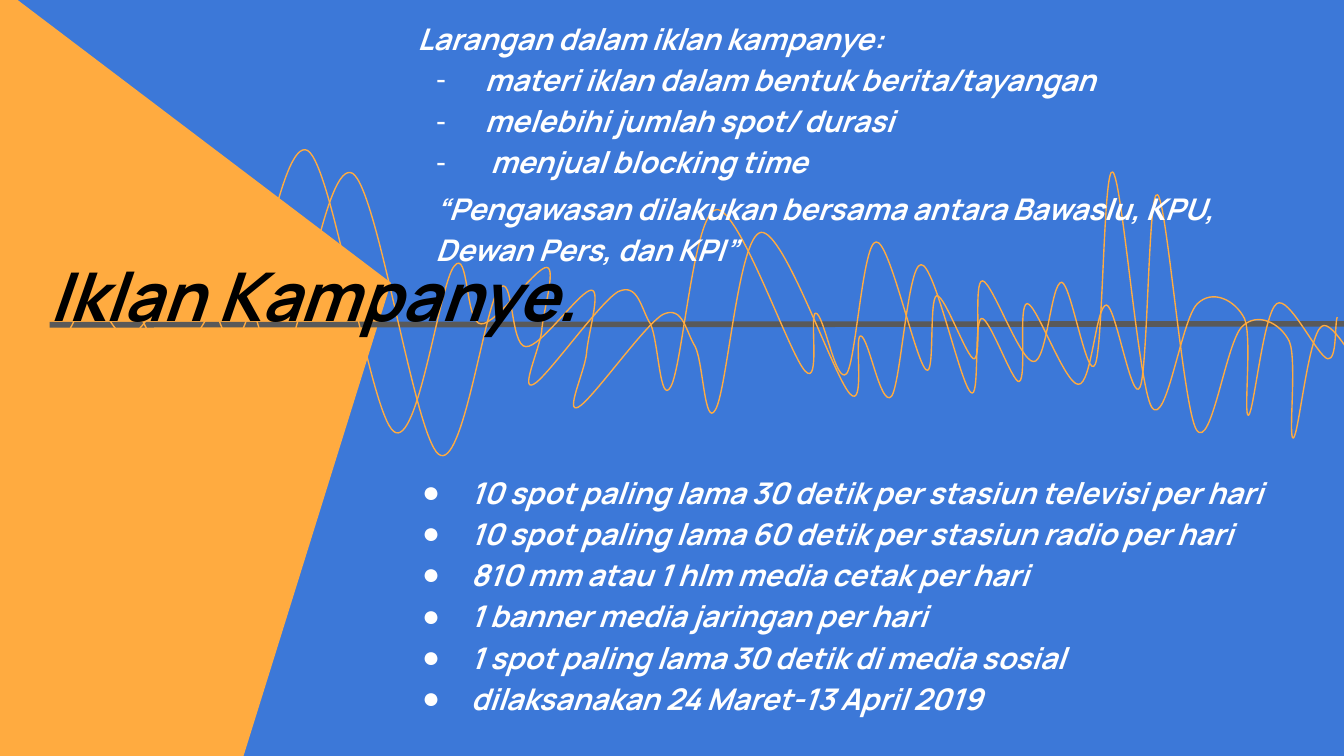
"""Build the campaign advertising rules slide."""
from dataclasses import dataclass

from lxml import etree
from pptx import Presentation
from pptx.dml.color import RGBColor
from pptx.enum.shapes import MSO_CONNECTOR, MSO_SHAPE
from pptx.enum.text import MSO_ANCHOR, MSO_AUTO_SIZE, PP_ALIGN
from pptx.oxml.ns import qn
from pptx.util import Pt

PENTAGON = MSO_SHAPE.REGULAR_PENTAGON
STRAIGHT = MSO_CONNECTOR.STRAIGHT
TOP = MSO_ANCHOR.TOP
NO_FIT = MSO_AUTO_SIZE.NONE
LEFT = PP_ALIGN.LEFT


@dataclass(frozen=True)
class Theme:
    """Colours, fonts and sizes of the slide."""
    blue: str = "3C78D8"
    orange: str = "FFAB40"
    grey: str = "595959"
    black: str = "000000"
    white: str = "FFFFFF"
    font: str = "Manrope"
    bullet_font: str = "Arial"
    title: int = 36
    body: int = 16
    spacing: float = 1.15


THEME = Theme()
UNIT = Pt(0.72)
WAVE_OFFSETS = [(0, 0), (24, 12.2)]
WAVE_START = (-122, 262)
WAVE_CURVES = [
    (-113, 245, -80, 161, -70, 159), (-60, 156, -68, 239, -63, 247),
    (-58, 255, -53, 208, -42, 208), (-31, 207, -11, 249, 4, 245),
    (19, 242, 33, 184, 48, 185), (63, 186, 78, 248, 94, 250),
    (110, 251, 129, 193, 143, 194), (157, 194, 162, 265, 177, 251),
    (191, 238, 209, 101, 229, 112), (248, 124, 275, 307, 293, 321),
    (311, 335, 327, 211, 338, 198), (349, 184, 346, 241, 358, 241),
    (369, 242, 399, 198, 407, 199), (414, 200, 404, 232, 403, 247),
    (401, 261, 387, 291, 397, 286), (407, 281, 446, 225, 460, 217),
    (475, 210, 477, 230, 484, 241), (490, 253, 491, 302, 499, 288),
    (508, 273, 516, 158, 533, 156), (550, 154, 587, 263, 599, 276),
    (611, 289, 602, 233, 607, 233), (613, 233, 622, 287, 630, 278),
    (637, 269, 642, 180, 652, 180), (662, 179, 681, 268, 689, 275),
    (696, 282, 691, 222, 697, 220), (703, 219, 720, 268, 725, 267),
    (731, 265, 724, 209, 731, 209), (738, 209, 759, 269, 769, 269),
    (779, 270, 782, 210, 790, 210), (797, 211, 809, 285, 815, 271),
    (821, 257, 821, 122, 828, 128), (835, 133, 847, 287, 857, 303),
    (868, 319, 879, 237, 891, 226), (902, 215, 919, 223, 926, 237),
    (932, 251, 925, 310, 929, 309), (933, 307, 940, 233, 950, 226),
    (959, 219, 980, 265, 988, 267), (995, 268, 993, 241, 995, 236),
]
BANS = [
    "materi iklan dalam bentuk berita/tayangan",
    "melebihi jumlah spot/ durasi",
    " menjual blocking time",
]
LIMITS = [
    "10 spot paling lama 30 detik per stasiun televisi per hari",
    "10 spot paling lama 60 detik per stasiun radio per hari",
    "810 mm atau 1 hlm media cetak per hari",
    "1 banner media jaringan per hari",
    "1 spot paling lama 30 detik di media sosial",
    "dilaksanakan 24 Maret-13 April 2019",
]
QUOTE = "“Pengawasan dilakukan bersama antara Bawaslu, KPU, Dewan Pers, dan KPI”"


def rgb(value):
    """Return a colour from its hex value."""
    return RGBColor.from_string(value)


def apply(target, values):
    """Set attributes from a dict of format values."""
    for name, value in values.items():
        setattr(target, name, value)


def place(sp, box):
    """Move and size a shape to a box in points."""
    apply(sp, dict(zip(("left", "top", "width", "height"), map(Pt, box))))


def set_line(sp, color, width):
    """Give a shape or connector a solid line."""
    sp.line.color.rgb = rgb(color)
    sp.line.width = Pt(width)


def add_pentagon(s, box):
    """Add the plain orange pentagon."""
    sp = s.shapes.add_shape(PENTAGON, *map(Pt, box))
    sp.shadow.inherit = False
    sp.fill.solid()
    sp.fill.fore_color.rgb = rgb(THEME.orange)
    sp.line.fill.background()


def add_rule(s, start, end):
    """Add the thick grey rule."""
    line = s.shapes.add_connector(STRAIGHT, *map(Pt, start + end))
    set_line(line, THEME.grey, 3)
    etree.SubElement(line._element.spPr, qn("a:effectLst"))


def bend(sp, knots):
    """Turn the straight segments of a wave into cubic curves."""
    left, top = map(min, zip(*knots))
    segments = list(sp._element.iter(qn("a:lnTo")))
    for segment, curve in zip(segments, WAVE_CURVES):
        cubic = etree.Element(qn("a:cubicBezTo"))
        for x, y in zip(curve[::2], curve[1::2]):
            etree.SubElement(cubic, qn("a:pt"), x=str(x - left), y=str(y - top))
        segment.getparent().replace(segment, cubic)


def add_waves(s):
    """Add the sound wave once at each offset."""
    knots = [WAVE_START] + [curve[4:] for curve in WAVE_CURVES]
    builder = s.shapes.build_freeform(*WAVE_START, scale=UNIT)
    builder.add_line_segments(knots[1:], close=False)
    for offset in WAVE_OFFSETS:
        sp = builder.convert_to_shape(*map(Pt, offset))
        bend(sp, knots)
        sp.shadow.inherit = False
        sp.fill.background()
        set_line(sp, THEME.orange, 0.75)


def format_frame(tf):
    """Set wrapping, anchor and margins of a text frame."""
    margins = ("margin_left", "margin_right", "margin_top", "margin_bottom")
    apply(tf, {"word_wrap": True, "auto_size": NO_FIT, "vertical_anchor": TOP})
    apply(tf, dict.fromkeys(margins, Pt(7.2)))


def add_run(p, text, size, color):
    """Add a bold italic run to a paragraph."""
    r = p.add_run()
    r.text = text
    apply(r.font, {"name": THEME.font, "size": Pt(size), "bold": True, "italic": True})
    r.font.color.rgb = rgb(color)


def add_bullet(p, mark):
    """Give a paragraph a hanging white bullet."""
    pPr = p._p.get_or_add_pPr()
    pPr.set("marL", str(Pt(36)))
    pPr.set("indent", str(Pt(-26)))
    color = etree.SubElement(pPr, qn("a:buClr"))
    etree.SubElement(color, qn("a:srgbClr"), val=THEME.white)
    etree.SubElement(pPr, qn("a:buFont"), typeface=THEME.bullet_font)
    etree.SubElement(pPr, qn("a:buChar"), char=mark)


def add_text(s, box, lines):
    """Add a text box from pairs of bullet mark and text."""
    tf = s.shapes.add_textbox(*map(Pt, box)).text_frame
    format_frame(tf)
    for i, (mark, text) in enumerate(lines):
        p = tf.add_paragraph() if i else tf.paragraphs[0]
        apply(p, {"line_spacing": THEME.spacing, "alignment": LEFT})
        if mark:
            add_bullet(p, mark)
        add_run(p, text, THEME.body, THEME.white)


def add_title(s, box, text):
    """Format the title placeholder and bring it to the front."""
    title = s.shapes.title
    place(title, box)
    format_frame(title.text_frame)
    p = title.text_frame.paragraphs[0]
    p.alignment = LEFT
    add_run(p, text, THEME.title, THEME.black)
    s.shapes._spTree.append(title._element)


def main():
    """Build and save the slide."""
    prs = Presentation()
    apply(prs, {"slide_width": Pt(720), "slide_height": Pt(405)})
    s = prs.slides.add_slide(prs.slide_layouts[5])
    s.background.fill.solid()
    s.background.fill.fore_color.rgb = rgb(THEME.blue)
    add_pentagon(s, (-206, -5.8, 415.5, 412))
    add_rule(s, (26.6, 174), (723, 173.5))
    add_waves(s)
    add_title(s, (19.4, 129.2, 577.4, 67.7), "Iklan Kampanye.")
    add_text(s, (209, 244.2, 577.4, 67.7), [("●", text) for text in LIMITS])
    add_text(s, (216.5, 1, 577.4, 67.7),
             [("", "Larangan dalam iklan kampanye:")] + [("-", text) for text in BANS])
    add_text(s, (226.2, 92, 441.4, 37.4), [("", QUOTE)])
    prs.save("out.pptx")


if __name__ == "__main__":
    main()
